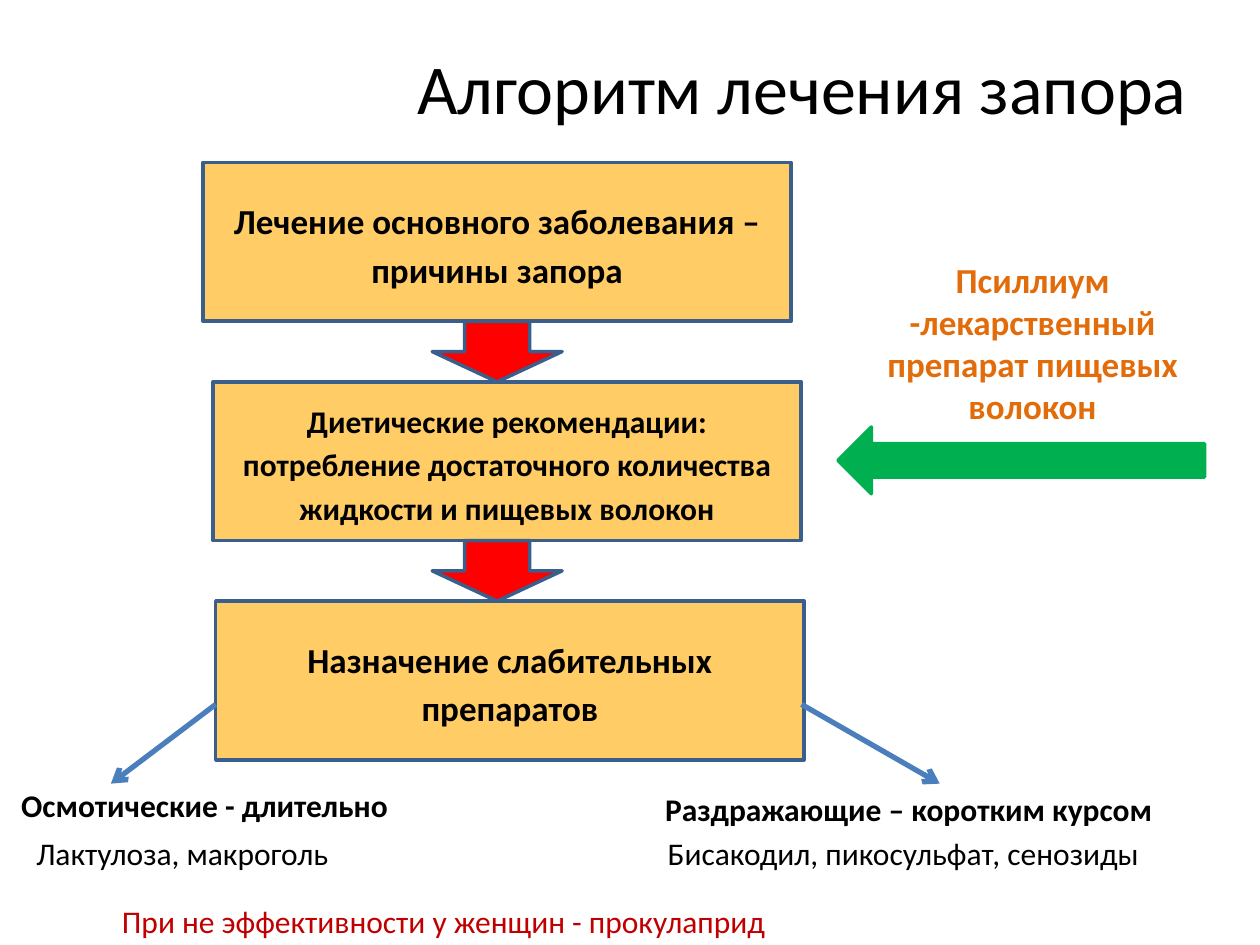
from lxml import etree
from pptx import Presentation
from pptx.dml.color import RGBColor
from pptx.enum.shapes import MSO_CONNECTOR, MSO_SHAPE
from pptx.enum.text import MSO_ANCHOR, PP_ALIGN
from pptx.oxml.ns import qn
from pptx.util import Pt

RECT, DOWN, LEFT_ARROW = MSO_SHAPE.RECTANGLE, MSO_SHAPE.DOWN_ARROW, MSO_SHAPE.LEFT_ARROW
STRAIGHT = MSO_CONNECTOR.STRAIGHT
MIDDLE, TOP = MSO_ANCHOR.MIDDLE, MSO_ANCHOR.TOP
CENTER, LEFT = PP_ALIGN.CENTER, PP_ALIGN.LEFT

FONT = "Calibri"
BLACK, EDGE, GREEN = "000000", "3A5F8C", "00B050"
STEP_TOP, STEP_H, GAP = 92.9, 90.7, 34.6
STEPS = [
    (116, "Лечение основного заболевания – причины запора", 20),
    (121.7, "Диетические рекомендации: потребление достаточного количества "
            "жидкости и пищевых волокон", 18),
    (123.3, "Назначение слабительных препаратов", 20),
]
NOTES = [
    (5, 445.7, 258, "Осмотические - длительно", True, BLACK),
    (13.7, 473, 219, "Лактулоза, макроголь", False, BLACK),
    (373, 447.8, 328, "Раздражающие – коротким курсом", True, BLACK),
    (374.4, 473, 315, "Бисакодил, пикосульфат, сенозиды", False, BLACK),
    (62.6, 512, 422, "При не эффективности у женщин - прокулаприд", False, "C00000"),
]


def color(text):
    """Turn a hex string into a colour."""
    return RGBColor.from_string(text)


def write(shape, text, size, bold=False, ink=BLACK, align=CENTER, anchor=MIDDLE):
    """Put one styled paragraph into a shape and return it."""
    frame = shape.text_frame
    frame.text = text
    frame.word_wrap = True
    frame.vertical_anchor = anchor
    para = frame.paragraphs[0]
    para.alignment = align
    font = para.runs[0].font
    font.name, font.size, font.bold = FONT, Pt(size), bold
    font.color.rgb = color(ink)
    return para


def add_block(slide, kind, left, top, width, height, fill, edge=EDGE):
    """Add a filled and outlined preset shape."""
    shape = slide.shapes.add_shape(kind, Pt(left), Pt(top), Pt(width), Pt(height))
    shape.shadow.inherit = False
    shape.fill.solid()
    shape.fill.fore_color.rgb = color(fill)
    shape.line.color.rgb = color(edge)
    shape.line.width = Pt(2)
    return shape


def add_step(slide, left, top, text, size):
    """Add one step of the treatment."""
    shape = add_block(slide, RECT, left, top, 336.2, STEP_H, "FFCC66")
    para = write(shape, text, size, True)
    para.line_spacing = 1.15
    para.space_after = Pt(10)


def add_text(slide, left, top, width, height, *words, **style):
    """Add a text box."""
    box = slide.shapes.add_textbox(Pt(left), Pt(top), Pt(width), Pt(height))
    write(box, *words, **style)


def add_branch(slide, start, end):
    """Add a line with an open arrowhead at its end."""
    line = slide.shapes.add_connector(STRAIGHT, *map(Pt, start + end))
    line.line.color.rgb = color("4B7EBC")
    line.line.width = Pt(3)
    etree.SubElement(line.line._get_or_add_ln(), qn("a:tailEnd"), type="arrow")
    etree.SubElement(line._element.spPr, qn("a:effectLst"))


def main():
    """Build and save the slide."""
    deck = Presentation()
    deck.slide_width, deck.slide_height = Pt(720), Pt(540)
    slide = deck.slides.add_slide(deck.slide_layouts[6])

    add_text(slide, 199.4, 9.4, 517.7, 80, "Алгоритм лечения запора", 40)
    for row, (left, text, size) in enumerate(STEPS):
        top = STEP_TOP + row * (STEP_H + GAP)
        add_step(slide, left, top, text, size)
        if row:
            add_block(slide, DOWN, 247, top - GAP, 74.2, GAP, "FF0000")

    add_block(slide, LEFT_ARROW, 478.8, 244, 209.5, 38.2, GREEN, GREEN)
    add_text(slide, 478.8, 172.8, 222.5, 46,
             "Псиллиум -лекарственный препарат пищевых волокон",
             20, True, "E36C0A")
    for left, top, width, text, bold, ink in NOTES:
        add_text(slide, left, top, width, 29, text, 18, bold, ink,
                 align=LEFT, anchor=TOP)
    add_branch(slide, (123.3, 402.5), (63.4, 447.8))
    add_branch(slide, (458, 402.5), (537, 447.8))
    deck.save("out.pptx")


if __name__ == "__main__":
    main()
